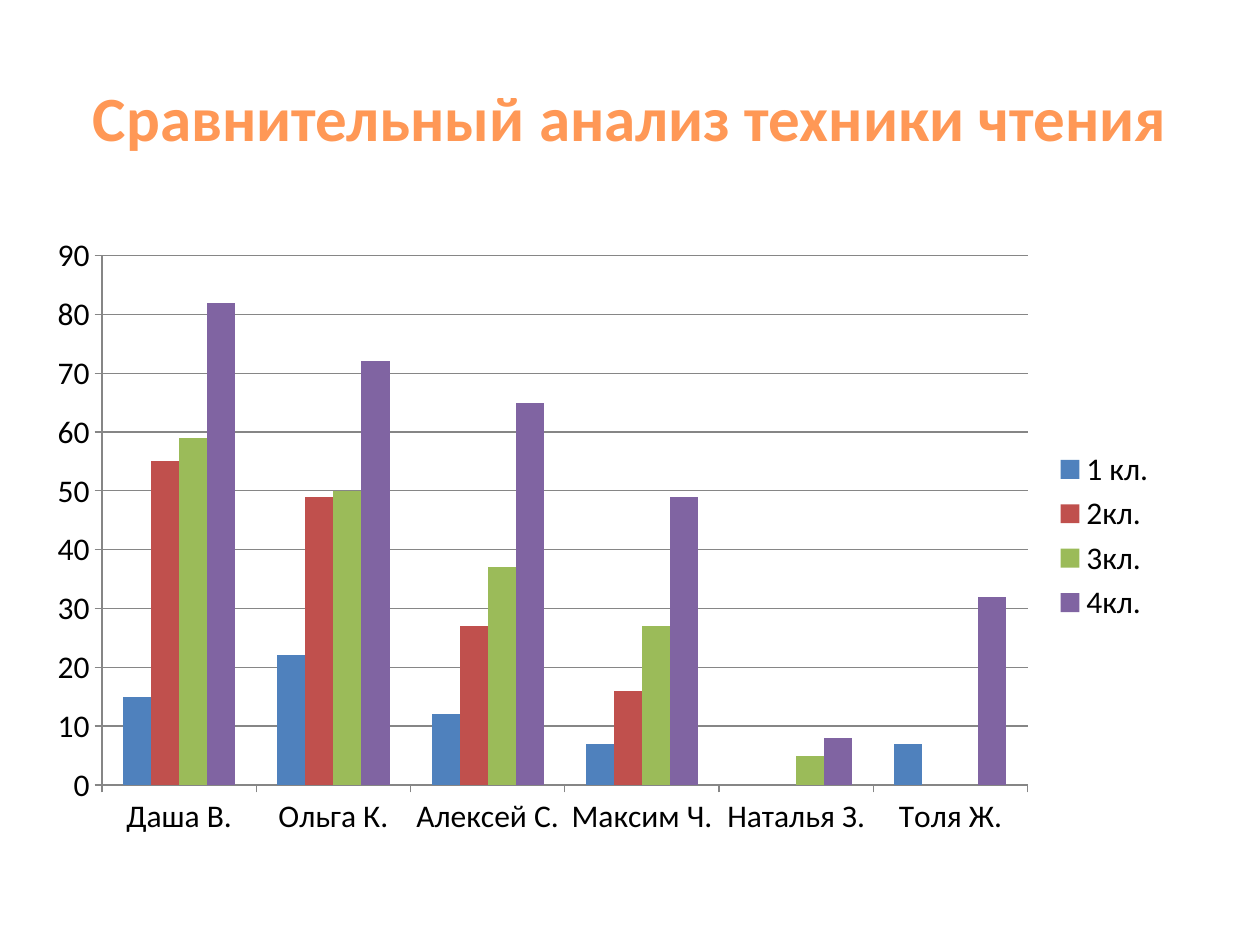
"""Build a slide with a clustered column chart of reading speed by pupil and grade."""
from pptx import Presentation
from pptx import util as u
from pptx.chart.data import CategoryChartData
from pptx.dml.color import RGBColor
from pptx.enum import chart as ch, text

TITLE = "Сравнительный анализ техники чтения"
PUPILS = ["Даша В.", "Ольга К.", "Алексей С.", "Максим Ч.", "Наталья З.", "Толя Ж."]
GRADES = [
    ("1 кл.", "4F81BD", (15, 22, 12, 7, None, 7)),
    ("2кл.", "C0504D", (55, 49, 27, 16, None, None)),
    ("3кл.", "9BBB59", (59, 50, 37, 27, 5, None)),
    ("4кл.", "8064A2", (82, 72, 65, 49, 8, 32)),
]
TITLE_BOX = (63, 38, 1134, 157)
CHART_BOX = (35, 224, 1134, 624)
FONT = "Calibri"
PX = 914400 / 126


def px(*lengths):
    return [u.Emu(round(n * PX)) for n in lengths]


def rgb(color):
    return RGBColor.from_string(color)


def set_font(font, size, color, bold=False):
    font.name, font.size, font.bold = FONT, u.Pt(size), bold
    font.color.rgb = rgb(color)


def add_title(s):
    sp = s.shapes.title
    sp.left, sp.top, sp.width, sp.height = px(*TITLE_BOX)
    tf = sp.text_frame
    tf.word_wrap = True
    tf.vertical_anchor = text.MSO_ANCHOR.MIDDLE
    p = tf.paragraphs[0]
    p.alignment = text.PP_ALIGN.CENTER
    r = p.add_run()
    r.text = TITLE
    set_font(r.font, 36, "FF9856", True)


def add_reading_chart(s):
    data = CategoryChartData()
    data.categories = PUPILS
    for name, _, values in GRADES:
        data.add_series(name, values)
    kind = ch.XL_CHART_TYPE.COLUMN_CLUSTERED
    chart = s.shapes.add_chart(kind, *px(*CHART_BOX), data).chart
    set_font(chart.font, 18, "000000")
    chart.has_title = False
    chart.has_legend = True
    chart.legend.position = ch.XL_LEGEND_POSITION.RIGHT
    chart.legend.include_in_layout = False

    plot = chart.plots[0]
    plot.vary_by_categories = False
    plot.gap_width, plot.overlap = 150, 0
    for series, (_, color, _) in zip(plot.series, GRADES):
        series.format.fill.solid()
        series.format.fill.fore_color.rgb = rgb(color)

    value = chart.value_axis
    value.minimum_scale, value.maximum_scale, value.major_unit = 0, 90, 10
    value.has_major_gridlines = True
    for axis in (chart.category_axis, value):
        axis.major_tick_mark = ch.XL_TICK_MARK.OUTSIDE
        axis.minor_tick_mark = ch.XL_TICK_MARK.NONE
    for part in (chart.category_axis, value, value.major_gridlines):
        part.format.line.color.rgb = rgb("868686")
        part.format.line.width = u.Pt(0.75)


def main():
    prs = Presentation()
    prs.slide_width, prs.slide_height = px(1260, 945)
    s = prs.slides.add_slide(prs.slide_layouts[5])
    add_title(s)
    add_reading_chart(s)
    prs.save("out.pptx")


if __name__ == "__main__":
    main()
